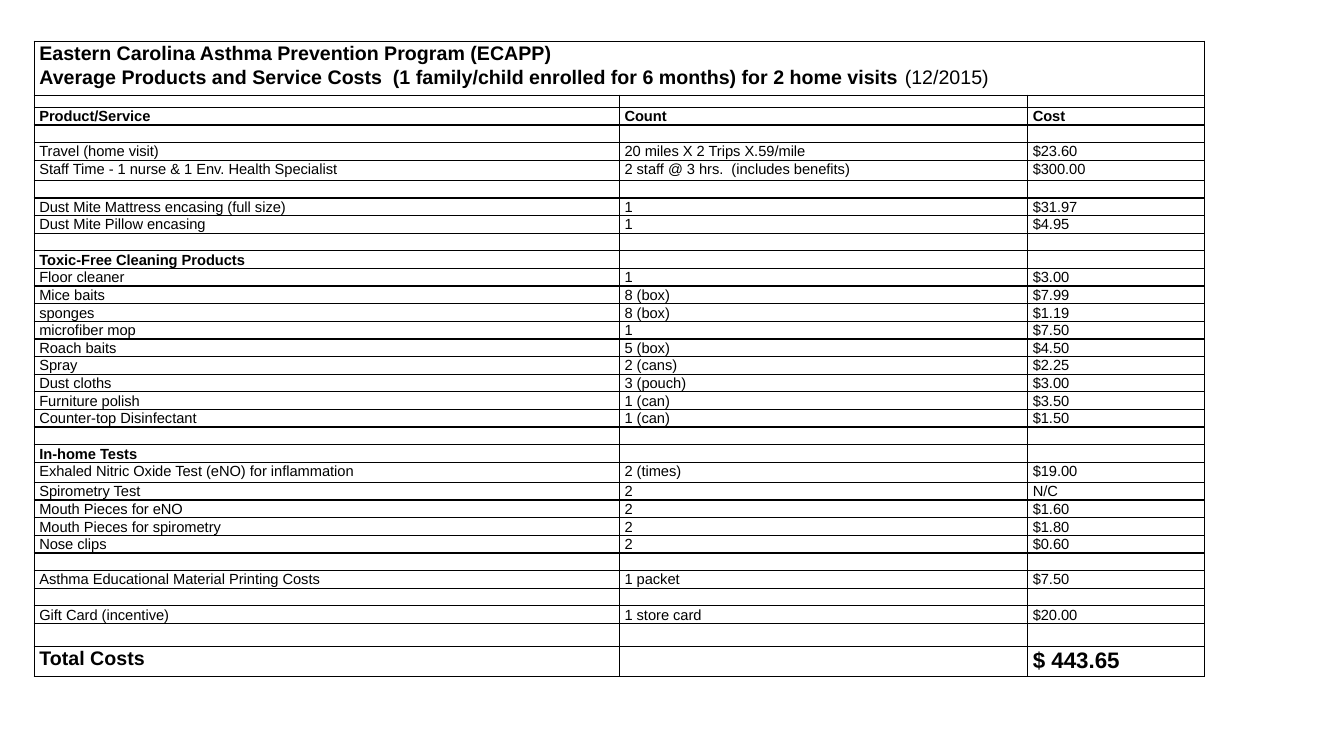
from lxml import etree
from pptx import Presentation
from pptx.dml.color import RGBColor
from pptx.enum.text import MSO_ANCHOR
from pptx.oxml.ns import qn
from pptx.util import Pt

TOP = MSO_ANCHOR.TOP
FONT = "Arial"
BLACK = "000000"
BODY_SIZE = 10.5
LINE_SPACING = 1.07
COLUMN_WIDTHS = [418, 291.6, 126]
ROW_HEIGHT = 12.6
SPECIAL_HEIGHTS = {0: 38.6, 1: 8.6, 5: 14.4, 22: 14.4, 31: 16.5, 32: 21.6}
SPACER_ROW, SPACER_SIZE = 1, 6
BOLD_ROWS = {2, 10, 21, 32}
TOTAL_SIZES = [14, BODY_SIZE, 16]

# Each title line is a list of (text, bold) pairs
TITLE_LINES = [
    [("Eastern Carolina Asthma Prevention Program (ECAPP)", True)],
    [("Average Products and Service Costs  (1 family/child enrolled for 6 months) "
      "for 2 home visits ", True), ("(12/2015)", False)],
]
BLANK = ("", "", "")
COST_ROWS = [
    BLANK,
    ("Product/Service", "Count", "Cost"),
    BLANK,
    ("Travel (home visit)", "20 miles X 2 Trips X.59/mile", "$23.60"),
    ("Staff Time - 1 nurse & 1 Env. Health Specialist",
     "2 staff @ 3 hrs.  (includes benefits)", "$300.00"),
    BLANK,
    ("Dust Mite Mattress encasing (full size)", "1", "$31.97"),
    ("Dust Mite Pillow encasing", "1", "$4.95"),
    BLANK,
    ("Toxic-Free Cleaning Products", "", ""),
    ("Floor cleaner", "1", "$3.00"),
    ("Mice baits", "8 (box)", "$7.99"),
    ("sponges", "8 (box)", "$1.19"),
    ("microfiber mop", "1", "$7.50"),
    ("Roach baits", "5 (box)", "$4.50"),
    ("Spray", "2 (cans)", "$2.25"),
    ("Dust cloths", "3 (pouch)", "$3.00"),
    ("Furniture polish", "1 (can)", "$3.50"),
    ("Counter-top Disinfectant", "1 (can)", "$1.50"),
    BLANK,
    ("In-home Tests", "", ""),
    ("Exhaled Nitric Oxide Test (eNO) for inflammation", "2 (times)", "$19.00"),
    ("Spirometry Test", "2", "N/C"),
    ("Mouth Pieces for eNO", "2", "$1.60"),
    ("Mouth Pieces for spirometry", "2", "$1.80"),
    ("Nose clips", "2", "$0.60"),
    BLANK,
    ("Asthma Educational Material Printing Costs", "1 packet", "$7.50"),
    BLANK,
    ("Gift Card (incentive)", "1 store card", "$20.00"),
    BLANK,
    ("Total Costs", "", "$ 443.65"),
]


def color(hex_string):
    return RGBColor.from_string(hex_string)


def format_para(para, size, bold):
    para.line_spacing = LINE_SPACING
    para.font.name = FONT
    para.font.size = Pt(size)
    para.font.bold = bold
    para.font.color.rgb = color(BLACK)


def format_cell(cell):
    """Set the margins, a thin border on every side, and no fill."""
    cell.margin_left = cell.margin_right = Pt(3.6)
    cell.margin_top = cell.margin_bottom = 0
    cell.vertical_anchor = TOP
    properties = cell._tc.get_or_add_tcPr()
    for side in ("lnL", "lnR", "lnT", "lnB"):
        line = etree.SubElement(properties, qn(f"a:{side}"), w=str(Pt(1)))
        fill = etree.SubElement(line, qn("a:solidFill"))
        etree.SubElement(fill, qn("a:srgbClr"), val=BLACK)
    cell.fill.background()


def write_cell(cell, text, size, bold):
    para = cell.text_frame.paragraphs[0]
    format_para(para, size, bold)
    if text:
        para.add_run().text = text
    else:
        # An empty cell takes its line height from the end mark
        etree.SubElement(para._p, qn("a:endParaRPr"), sz=str(int(size * 100)))


def write_title(table):
    title_cell = table.cell(0, 0)
    title_cell.merge(table.cell(0, len(COLUMN_WIDTHS) - 1))
    frame = title_cell.text_frame
    for index, line in enumerate(TITLE_LINES):
        para = frame.add_paragraph() if index else frame.paragraphs[0]
        format_para(para, 14, True)
        for text, bold in line:
            span = para.add_run()
            span.text = text
            if not bold:
                span.font.bold = False


def add_cost_table(page):
    row_count = len(COST_ROWS) + 1
    heights = [SPECIAL_HEIGHTS.get(row, ROW_HEIGHT) for row in range(row_count)]
    table = page.shapes.add_table(
        row_count, len(COLUMN_WIDTHS), Pt(24.5), Pt(29.5),
        Pt(sum(COLUMN_WIDTHS)), Pt(sum(heights))).table
    table.first_row = table.horz_banding = False
    for column, width in zip(table.columns, COLUMN_WIDTHS):
        column.width = Pt(width)
    for row, height in zip(table.rows, heights):
        row.height = Pt(height)
        for cell in row.cells:
            format_cell(cell)

    write_title(table)
    for row, texts in enumerate(COST_ROWS, start=1):
        for column, text in enumerate(texts):
            size = BODY_SIZE
            if row == SPACER_ROW:
                size = SPACER_SIZE
            elif row == row_count - 1:
                size = TOTAL_SIZES[column]
            write_cell(table.cell(row, column), text, size, row in BOLD_ROWS)


def main():
    deck = Presentation()
    deck.slide_width, deck.slide_height = Pt(960), Pt(540)
    page = deck.slides.add_slide(deck.slide_layouts[6])
    add_cost_table(page)
    deck.save("out.pptx")


if __name__ == "__main__":
    main()
